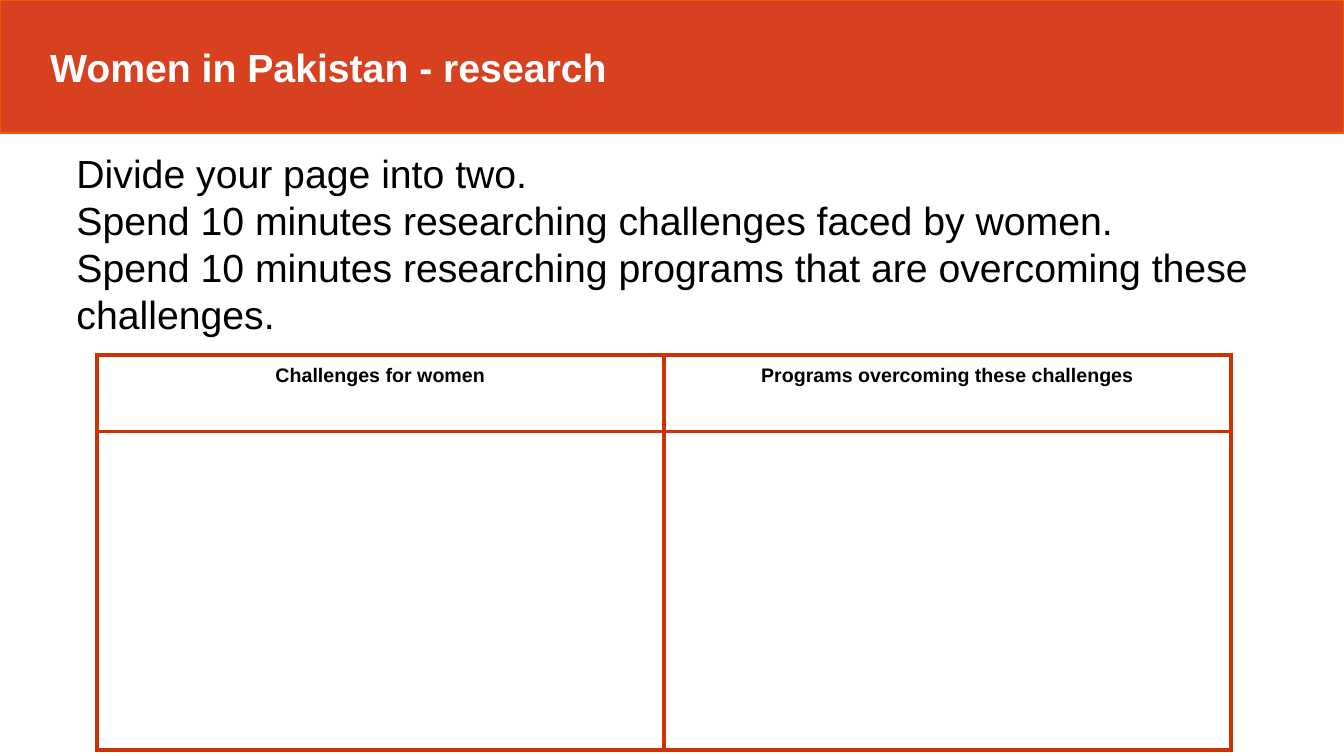
from pptx import Presentation
from pptx.dml.color import RGBColor
from pptx.enum.shapes import MSO_SHAPE
from pptx.enum.text import MSO_ANCHOR, MSO_AUTO_SIZE, PP_ALIGN
from pptx.oxml import parse_xml
from pptx.oxml.ns import nsdecls
from pptx.util import Inches, Pt

TITLE = "Women in Pakistan - research"
STEPS = [
    "Divide your page into two.",
    "Spend 10 minutes researching challenges faced by women.",
    "Spend 10 minutes researching programs that are overcoming these challenges.",
]
HEADINGS = ["Challenges for women", "Programs overcoming these challenges"]
ROW_HEIGHTS = [0.76, 3.16]
WIDTH, HEIGHT = 13.33, 7.5
BANNER_HEIGHT = 1.32
STEPS_BOX = (0.66, 1.38, 12.21, 2.09)
TABLE_LEFT, TABLE_TOP, TABLE_WIDTH = 0.96, 3.52, 11.25
FONT = "Arial"
BANNER_RED = RGBColor(0xD7, 0x41, 0x20)
BANNER_EDGE = RGBColor(0xEA, 0x5B, 0x0C)
GRID_RED = RGBColor(0xCC, 0x33, 0x00)
WHITE = RGBColor(0xFF, 0xFF, 0xFF)
BLACK = RGBColor(0x00, 0x00, 0x00)


def write(p, text, size, color, bold=False, align=PP_ALIGN.LEFT):
    p.text = text
    p.alignment = align
    p.font.name, p.font.size = FONT, Pt(size)
    p.font.bold, p.font.color.rgb = bold, color


def set_margins(box):
    box.margin_left = box.margin_right = Inches(0.1)
    box.margin_top = box.margin_bottom = Inches(0.1)


def add_borders(cell):
    for side in "LRTB":
        cell._tc.get_or_add_tcPr().append(parse_xml(
            f'<a:ln{side} {nsdecls("a")} w="{Pt(3)}"><a:solidFill>'
            f'<a:srgbClr val="{GRID_RED}"/></a:solidFill></a:ln{side}>'))


def add_banner(s):
    sp = s.shapes.add_shape(MSO_SHAPE.RECTANGLE, 0, 0, Inches(WIDTH), Inches(BANNER_HEIGHT))
    sp.shadow.inherit = False
    sp.fill.solid()
    sp.fill.fore_color.rgb = BANNER_RED
    sp.line.color.rgb = BANNER_EDGE
    sp.line.width = Pt(1)
    tf = sp.text_frame
    tf.vertical_anchor = MSO_ANCHOR.MIDDLE
    p = tf.paragraphs[0]
    write(p, TITLE, 28, WHITE, bold=True)
    p._p.get_or_add_pPr().set("marL", str(Inches(0.4)))


def add_table(s):
    table = s.shapes.add_table(
        len(ROW_HEIGHTS), len(HEADINGS), Inches(TABLE_LEFT), Inches(TABLE_TOP),
        Inches(TABLE_WIDTH), Inches(sum(ROW_HEIGHTS))).table
    table.first_row = table.horz_banding = False
    for row, height in zip(table.rows, ROW_HEIGHTS):
        row.height = Inches(height)
    for cell in table.iter_cells():
        set_margins(cell)
        add_borders(cell)
        cell.fill.background()
    for cell, heading in zip(table.rows[0].cells, HEADINGS):
        write(cell.text_frame.paragraphs[0], heading, 14, BLACK, True, PP_ALIGN.CENTER)


def add_steps(s):
    tf = s.shapes.add_textbox(*map(Inches, STEPS_BOX)).text_frame
    tf.word_wrap = True
    tf.auto_size = MSO_AUTO_SIZE.SHAPE_TO_FIT_TEXT
    set_margins(tf)
    for i, step in enumerate(STEPS):
        write(tf.add_paragraph() if i else tf.paragraphs[0], step, 28, BLACK)


def main():
    """Build the research task slide."""
    prs = Presentation()
    prs.slide_width, prs.slide_height = Inches(WIDTH), Inches(HEIGHT)
    s = prs.slides.add_slide(prs.slide_layouts[6])
    add_banner(s)
    add_table(s)
    add_steps(s)
    prs.save("out.pptx")


if __name__ == "__main__":
    main()
